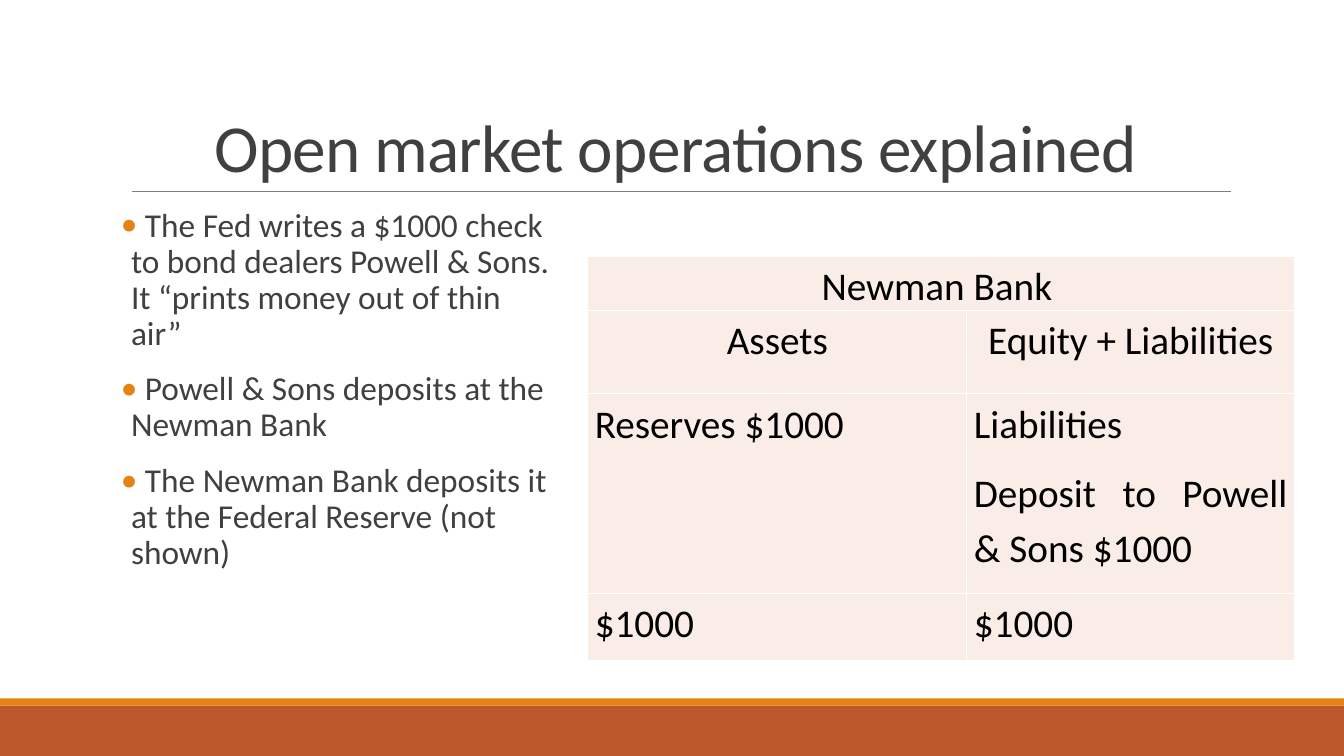
import pptx
import pptx.util
import pptx.oxml
import pptx.dml.color
import pptx.enum.shapes
import pptx.enum.text
from pptx.util import Inches

# Content
TITLE = "Open market operations explained"
BULLETS = [
    " The Fed writes a $1000 check to bond dealers Powell & Sons. It “prints money out of thin air”",
    " Powell & Sons deposits at the Newman Bank",
    " The Newman Bank deposits it at the Federal Reserve (not shown)",
]
BALANCE_SHEET = [
    ["Newman Bank ", ""],
    ["Assets", "Equity + Liabilities"],
    ["Reserves $1000", "Liabilities\nDeposit to Powell & Sons $1000"],
    ["$1000", "$1000"],
]
HEADER_ROWS = 2
COL_WIDTHS = [3.76, 3.25]
ROW_HEIGHTS = [0.4, 0.83, 1.98, 0.67]
COLORS = {
    "band": "BD582C", "accent": "E48312", "rule": "808080", "text": "404040",
    "table_text": "000000", "cell": "FAEDE7", "border": "FFFFFF",
}
FONT = "Calibri"
WIDTH, HEIGHT = 13.33, 7.5
BAND_HEIGHT, STRIPE_HEIGHT = 0.5, 0.07

ALIGN = pptx.enum.text.PP_ALIGN
NS = 'xmlns:a="http://schemas.openxmlformats.org/drawingml/2006/main"'


def rgb(name):
    return pptx.dml.color.RGBColor.from_string(COLORS[name])


def format_runs(p, size, color):
    for r in p.runs:
        r.font.name = FONT
        r.font.size = pptx.util.Pt(size)
        r.font.color.rgb = rgb(color)


def add_bullet(p):
    pPr = p._p.get_or_add_pPr()
    pPr.set("marL", str(Inches(0.1)))
    pPr.set("indent", str(-Inches(0.1)))
    for xml in (
        f'<a:buClr {NS}><a:srgbClr val="{COLORS["accent"]}"/></a:buClr>',
        f'<a:buFont {NS} typeface="{FONT}"/>',
        f'<a:buChar {NS} char="•"/>',
    ):
        pPr.append(pptx.oxml.parse_xml(xml))


def add_borders(cell):
    tcPr = cell._tc.get_or_add_tcPr()
    for side in ("lnL", "lnR", "lnT", "lnB"):
        tcPr.append(pptx.oxml.parse_xml(
            f'<a:{side} {NS} w="12700"><a:solidFill>'
            f'<a:srgbClr val="{COLORS["border"]}"/></a:solidFill></a:{side}>'))


prs = pptx.Presentation()
prs.slide_width, prs.slide_height = Inches(WIDTH), Inches(HEIGHT)
s = prs.slides.add_slide(prs.slide_layouts[5])

# Bottom bands
band_top = HEIGHT - BAND_HEIGHT
for top, height, color in [
    (band_top, BAND_HEIGHT, "band"),
    (band_top - STRIPE_HEIGHT, STRIPE_HEIGHT, "accent"),
]:
    sp = s.shapes.add_shape(pptx.enum.shapes.MSO_SHAPE.RECTANGLE, 0,
                            Inches(top), prs.slide_width, Inches(height))
    sp.shadow.inherit = False
    sp.fill.solid()
    sp.fill.fore_color.rgb = rgb(color)
    sp.line.fill.background()

# Rule under the title
rule = s.shapes.add_connector(pptx.enum.shapes.MSO_CONNECTOR.STRAIGHT,
                              Inches(1.31), Inches(1.9), Inches(12.21), Inches(1.9))
rule.line.color.rgb = rgb("rule")
rule.line.width = pptx.util.Pt(0.5)
rule._element.spPr.append(pptx.oxml.parse_xml(f"<a:effectLst {NS}/>"))

# Title
title = s.shapes.title
title.left, title.top = Inches(1.2), Inches(0.31)
title.width, title.height = Inches(11), Inches(1.59)
tf = title.text_frame
tf.text = TITLE
tf.word_wrap = True
tf.auto_size = pptx.enum.text.MSO_AUTO_SIZE.NONE
tf.vertical_anchor = pptx.enum.text.MSO_ANCHOR.BOTTOM
p = tf.paragraphs[0]
p.alignment = ALIGN.CENTER
p.line_spacing = 0.85
format_runs(p, 48, "text")
p.runs[0].font._element.set("spc", "-50")

# Bullets
body = s.shapes.add_textbox(Inches(1.2), Inches(2.02), Inches(4.3), Inches(4.4))
tf = body.text_frame
tf.word_wrap = True
tf.margin_left = tf.margin_right = 0
tf.margin_top = tf.margin_bottom = Inches(0.05)
tf.text = "\n".join(BULLETS)
for p in tf.paragraphs:
    p.line_spacing = 0.9
    p.space_before = pptx.util.Pt(12)
    p.space_after = pptx.util.Pt(2)
    add_bullet(p)
    format_runs(p, 23.8, "text")

# Balance sheet
table = s.shapes.add_table(len(ROW_HEIGHTS), len(COL_WIDTHS), Inches(5.83), Inches(2.54),
                           Inches(sum(COL_WIDTHS)), Inches(sum(ROW_HEIGHTS))).table
table.first_row = table.horz_banding = False
for col, width in zip(table.columns, COL_WIDTHS):
    col.width = Inches(width)
for row, height in zip(table.rows, ROW_HEIGHTS):
    row.height = Inches(height)
table.cell(0, 0).merge(table.cell(0, 1))

for i, texts in enumerate(BALANCE_SHEET):
    for j, text in enumerate(texts):
        cell = table.cell(i, j)
        add_borders(cell)
        cell.fill.solid()
        cell.fill.fore_color.rgb = rgb("cell")
        cell.margin_left = cell.margin_right = Inches(0.07)
        cell.margin_top = cell.margin_bottom = 0
        if cell.is_spanned:
            continue
        cell.text_frame.text = text
        for p in cell.text_frame.paragraphs:
            p.alignment = ALIGN.CENTER if i < HEADER_ROWS else ALIGN.JUSTIFY
            p.line_spacing = 1.15
            p.space_after = pptx.util.Pt(10)
            format_runs(p, 28, "table_text")

prs.save("out.pptx")
